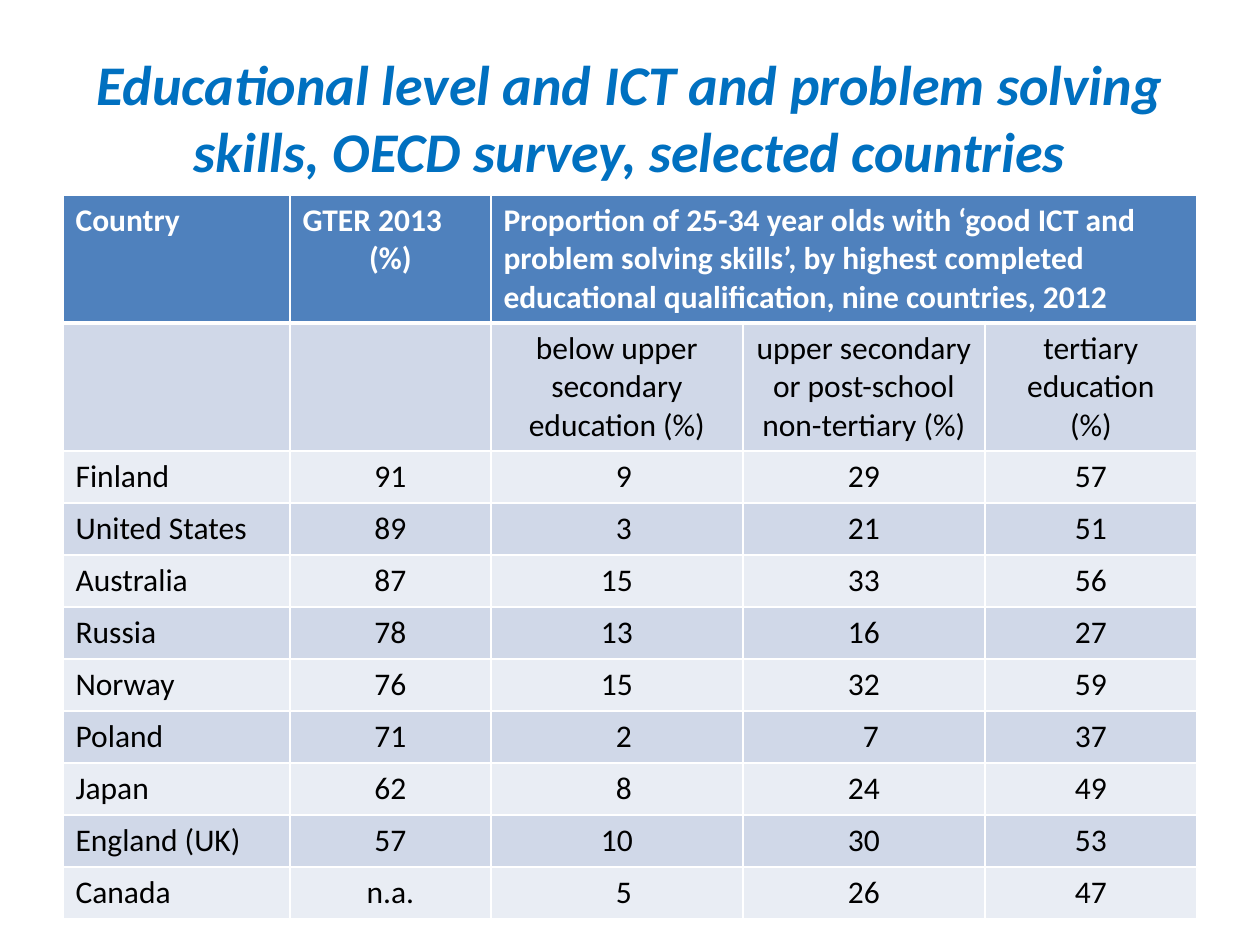
from lxml.etree import SubElement
from pptx import Presentation
from pptx.dml.color import RGBColor
from pptx.enum.text import MSO_ANCHOR, PP_ALIGN
from pptx.oxml.ns import qn
from pptx.util import Pt

PX = 914400 // 126
FONT = "Calibri"
TITLE_BLUE = RGBColor(0x00, 0x70, 0xC0)
HEADER_BLUE = RGBColor(0x4F, 0x81, 0xBD)
BAND_DARK = RGBColor(0xD0, 0xD8, 0xE8)
BAND_LIGHT = RGBColor(0xE9, 0xED, 0xF4)
WHITE = RGBColor(0xFF, 0xFF, 0xFF)
BLACK = RGBColor(0x00, 0x00, 0x00)

TITLE = "Educational level and ICT and problem solving skills, OECD survey, selected countries"
HEADINGS = [
    ["Country"],
    ["GTER 2013", "(%)"],
    ["Proportion of 25-34 year olds with ‘good ICT and problem solving skills’, "
     "by highest completed educational qualification, nine countries, 2012"],
]
LEVELS = [
    ["below upper secondary education (%)"],
    ["upper secondary or post-school non-tertiary (%)"],
    ["tertiary education", "(%)"],
]
COUNTRIES = [
    ("Finland", "91", "9", "29", "57"),
    ("United States", "89", "3", "21", "51"),
    ("Australia", "87", "15", "33", "56"),
    ("Russia", "78", "13", "16", "27"),
    ("Norway", "76", "15", "32", "59"),
    ("Poland", "71", "2", "7", "37"),
    ("Japan", "62", "8", "24", "49"),
    ("England (UK)", "57", "10", "30", "53"),
    ("Canada", "n.a.", "5", "26", "47"),
]
COLUMN_WIDTHS = [227, 201, 252, 242, 212]
HEADING_HEIGHT = 128
COUNTRY_HEIGHT = 52
DIGIT_SHIFT = 14


def px(length):
    return length * PX


def write(paragraph, text, size, color, align, bold=False, italic=False):
    paragraph.alignment = align
    run = paragraph.add_run()
    run.text = text
    font = run.font
    font.name, font.size = FONT, Pt(size)
    font.bold, font.italic = bold, italic
    font.color.rgb = color


def add_title(slide):
    title = slide.shapes.add_textbox(px(63), px(38), px(1134), px(157))
    frame = title.text_frame
    frame.word_wrap = True
    frame.vertical_anchor = MSO_ANCHOR.MIDDLE
    write(frame.paragraphs[0], TITLE, 32, TITLE_BLUE, PP_ALIGN.CENTER, True, True)


def style_cell(cell, fill, bottom_width=1, top_width=1):
    properties = cell._tc.get_or_add_tcPr()
    widths = {"a:lnL": 1, "a:lnR": 1, "a:lnT": top_width, "a:lnB": bottom_width}
    for side, width in widths.items():
        border = SubElement(properties, qn(side), w=str(Pt(width)))
        solid = SubElement(border, qn("a:solidFill"))
        SubElement(solid, qn("a:srgbClr"), val=str(WHITE))
    cell.fill.solid()
    cell.fill.fore_color.rgb = fill


def fill_cell(cell, lines, color, aligns, bold=False):
    frame = cell.text_frame
    for index, line in enumerate(lines):
        paragraph = frame.add_paragraph() if index else frame.paragraphs[0]
        write(paragraph, line, 18, color, aligns[index], bold)


def add_headings(table):
    for column in range(len(COLUMN_WIDTHS)):
        style_cell(table.cell(0, column), HEADER_BLUE, bottom_width=3)
        style_cell(table.cell(1, column), BAND_DARK, top_width=3)
    table.cell(0, 2).merge(table.cell(0, 4))
    for column, lines in enumerate(HEADINGS):
        fill_cell(table.cell(0, column), lines, WHITE, [PP_ALIGN.LEFT, PP_ALIGN.CENTER], True)
    for column, lines in enumerate(LEVELS, start=2):
        fill_cell(table.cell(1, column), lines, BLACK, [PP_ALIGN.CENTER] * 2)


def add_countries(table):
    for row, values in enumerate(COUNTRIES, start=2):
        for column, value in enumerate(values):
            cell = table.cell(row, column)
            style_cell(cell, BAND_DARK if row % 2 else BAND_LIGHT)
            align = PP_ALIGN.CENTER if column else PP_ALIGN.LEFT
            fill_cell(cell, [value], BLACK, [align])
            if len(value) == 1:
                cell.margin_left += px(DIGIT_SHIFT)


def add_skills_table(slide):
    heights = [HEADING_HEIGHT] * 2 + [COUNTRY_HEIGHT] * len(COUNTRIES)
    table = slide.shapes.add_table(
        len(heights), len(COLUMN_WIDTHS), px(63), px(195),
        px(sum(COLUMN_WIDTHS)), px(sum(heights))).table
    for column, width in zip(table.columns, COLUMN_WIDTHS):
        column.width = px(width)
    for row, height in zip(table.rows, heights):
        row.height = px(height)
    add_headings(table)
    add_countries(table)


def main():
    presentation = Presentation()
    presentation.slide_width = px(1260)
    presentation.slide_height = px(945)
    slide = presentation.slides.add_slide(presentation.slide_layouts[6])
    add_title(slide)
    add_skills_table(slide)
    presentation.save("out.pptx")


if __name__ == "__main__":
    main()
